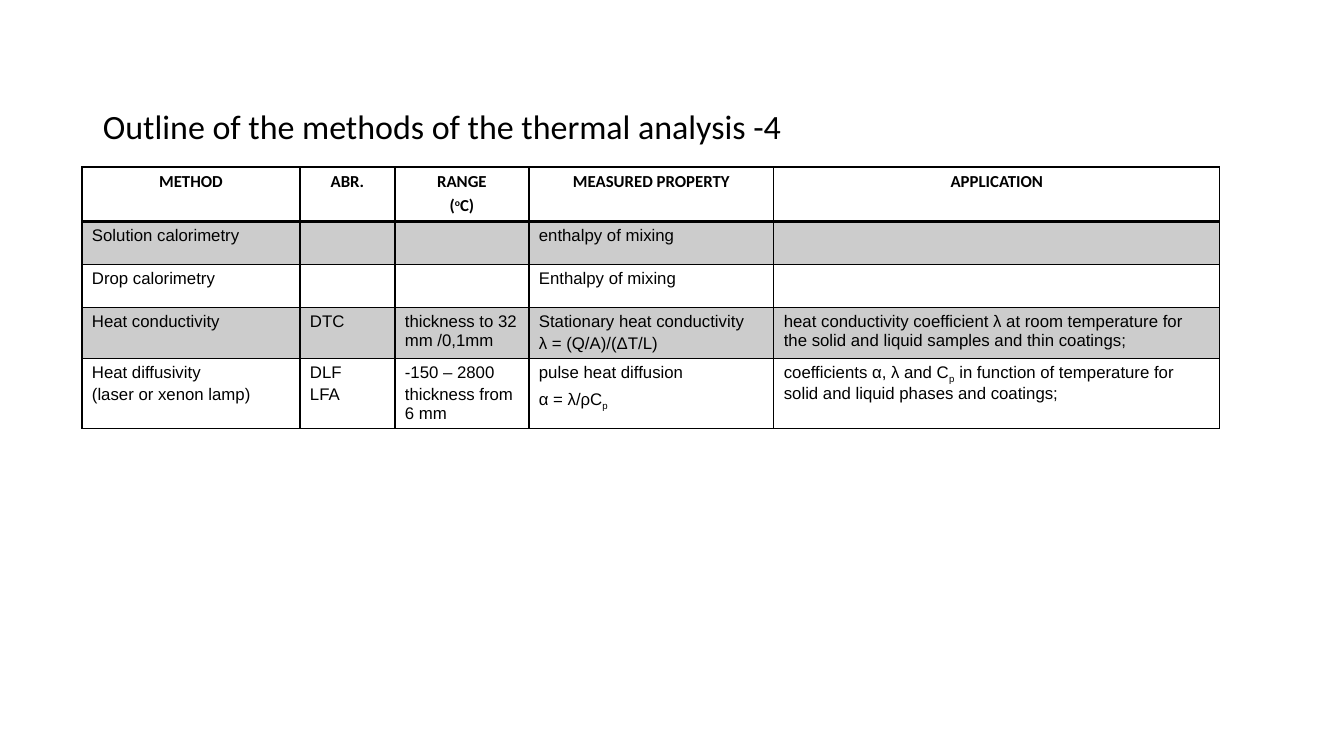
from dataclasses import dataclass
from typing import Any

from lxml import etree
from pptx import Presentation
from pptx import util as u
from pptx.dml.color import RGBColor
from pptx.enum import text as t
from pptx.oxml import ns


@dataclass(frozen=True)
class Theme:
    ink: str = "000000"
    shade: int = 20
    title: float = 24.3
    cell: float = 12
    head: str = "Calibri"
    body: str = "Arial"
    thin: float = 1
    thick: float = 2


@dataclass(frozen=True)
class Cell:
    lines: tuple[str, ...] = ()
    gap: float = 0.2


@dataclass(frozen=True)
class Row:
    high: int
    cells: tuple[Cell, ...]
    head: bool = False
    dark: bool = False


LOOK = Theme()
SCALE = 914400 / 100.8
BASES = {"^": "30000", "_": "-25000"}
COLS = (218, 95, 134, 245, 446)
ROWS = (
    Row(54, (
        Cell(("METHOD",)),
        Cell(("ABR.",)),
        Cell(("RANGE", "(|^o|C)")),
        Cell(("MEASURED PROPERTY",)),
        Cell(("APPLICATION",)),
    ), head=True),
    Row(43, (
        Cell(("Solution calorimetry",)),
        Cell(),
        Cell(),
        Cell(("enthalpy of mixing",)),
        Cell(),
    ), dark=True),
    Row(43, (
        Cell(("Drop calorimetry",)),
        Cell(),
        Cell(),
        Cell(("Enthalpy of mixing",)),
        Cell(),
    )),
    Row(51, (
        Cell(("Heat conductivity",)),
        Cell(("DTC",)),
        Cell(("thickness to 32 mm /0,1mm",)),
        Cell(("Stationary heat conductivity", "λ = (Q/A)/(ΔT/L)")),
        Cell(("heat conductivity coefficient λ at room temperature for "
              "the solid and liquid samples and thin coatings;",)),
    ), dark=True),
    Row(70, (
        Cell(("Heat diffusivity", "(laser or xenon lamp)")),
        Cell(("DLF", "LFA")),
        Cell(("-150 – 2800", "thickness from 6 mm")),
        Cell(("pulse heat diffusion", "α = λ/ρC|_p"), gap=0.5),
        Cell(("coefficients α, λ and C|_p| in function of temperature for "
              "solid and liquid phases and coatings;",)),
    )),
)


def px(n: int) -> u.Emu:
    return u.Emu(round(n * SCALE))


def put(item: Any, vals: dict[str, Any]) -> None:
    for key, val in vals.items():
        setattr(item, key, val)


def style(font: Any, name: str, size: float, bold: bool) -> None:
    put(font, {"name": name, "size": u.Pt(size), "bold": bold})
    font.color.rgb = RGBColor.from_string(LOOK.ink)


def edge(cell: Any, side: str, width: float) -> None:
    line = etree.SubElement(cell._tc.get_or_add_tcPr(), ns.qn(f"a:ln{side}"),
                            w=str(u.Pt(width)))
    fill = etree.SubElement(line, ns.qn("a:solidFill"))
    etree.SubElement(fill, ns.qn("a:srgbClr"), val=LOOK.ink)


def paint(cell: Any, dark: bool) -> None:
    if not dark:
        cell.fill.background()
        return
    cell.fill.solid()
    cell.fill.fore_color.rgb = RGBColor.from_string(LOOK.ink)
    tint = cell._tc.tcPr.find(".//" + ns.qn("a:solidFill") + "/" + ns.qn("a:srgbClr"))
    tint = cell._tc.tcPr.find(ns.qn("a:solidFill"))[0]
    etree.SubElement(tint, ns.qn("a:alpha"), val=str(LOOK.shade * 1000))


def write(cell: Any, data: Cell, head: bool) -> None:
    frame = cell.text_frame
    for n, line in enumerate(data.lines):
        para = frame.add_paragraph() if n else frame.paragraphs[0]
        para.alignment = t.PP_ALIGN.CENTER if head else t.PP_ALIGN.LEFT
        if n:
            para.space_before = u.Pt(LOOK.cell * data.gap)
        for part in line.split("|"):
            base = BASES.get(part[0])
            run = para.add_run()
            run.text = part[1:] if base else part
            style(run.font, LOOK.head if head else LOOK.body, LOOK.cell, head)
            if base:
                run._r.get_or_add_rPr().set("baseline", base)


def add_title(slide: Any) -> None:
    title = slide.shapes.title
    put(title, {"left": px(93), "top": px(78), "width": px(1159), "height": px(79)})
    frame = title.text_frame
    frame.text = "Outline of the methods of the thermal analysis -4"
    put(frame, {"vertical_anchor": t.MSO_ANCHOR.MIDDLE, "word_wrap": True,
                "auto_size": t.MSO_AUTO_SIZE.NONE, "margin_left": px(10),
                "margin_top": px(27), "margin_bottom": px(5)})
    para = frame.paragraphs[0]
    put(para, {"alignment": t.PP_ALIGN.LEFT, "line_spacing": 0.9})
    style(para.runs[0].font, LOOK.head, LOOK.title, False)


def add_grid(slide: Any) -> None:
    grid = slide.shapes.add_table(
        len(ROWS), len(COLS), px(82), px(167),
        px(sum(COLS)), px(sum(row.high for row in ROWS))).table
    put(grid, {"first_row": False, "horz_banding": False})
    for col, wide in zip(grid.columns, COLS):
        col.width = px(wide)
    for r, row in enumerate(ROWS):
        grid.rows[r].height = px(row.high)
        for c, data in enumerate(row.cells):
            cell = grid.cell(r, c)
            put(cell, {"margin_left": px(10), "margin_right": px(10),
                       "margin_top": px(5), "margin_bottom": px(5)})
            rule = {"L": LOOK.thin, "R": LOOK.thin,
                    "T": LOOK.thick if r == 1 else LOOK.thin,
                    "B": LOOK.thick if row.head else LOOK.thin}
            for side, width in rule.items():
                edge(cell, side, width)
            paint(cell, row.dark)
            write(cell, data, row.head)


def main() -> None:
    deck = Presentation()
    put(deck, {"slide_width": px(1344), "slide_height": px(756)})
    slide = deck.slides.add_slide(deck.slide_layouts[5])
    add_title(slide)
    add_grid(slide)
    deck.save("out.pptx")


if __name__ == "__main__":
    main()
